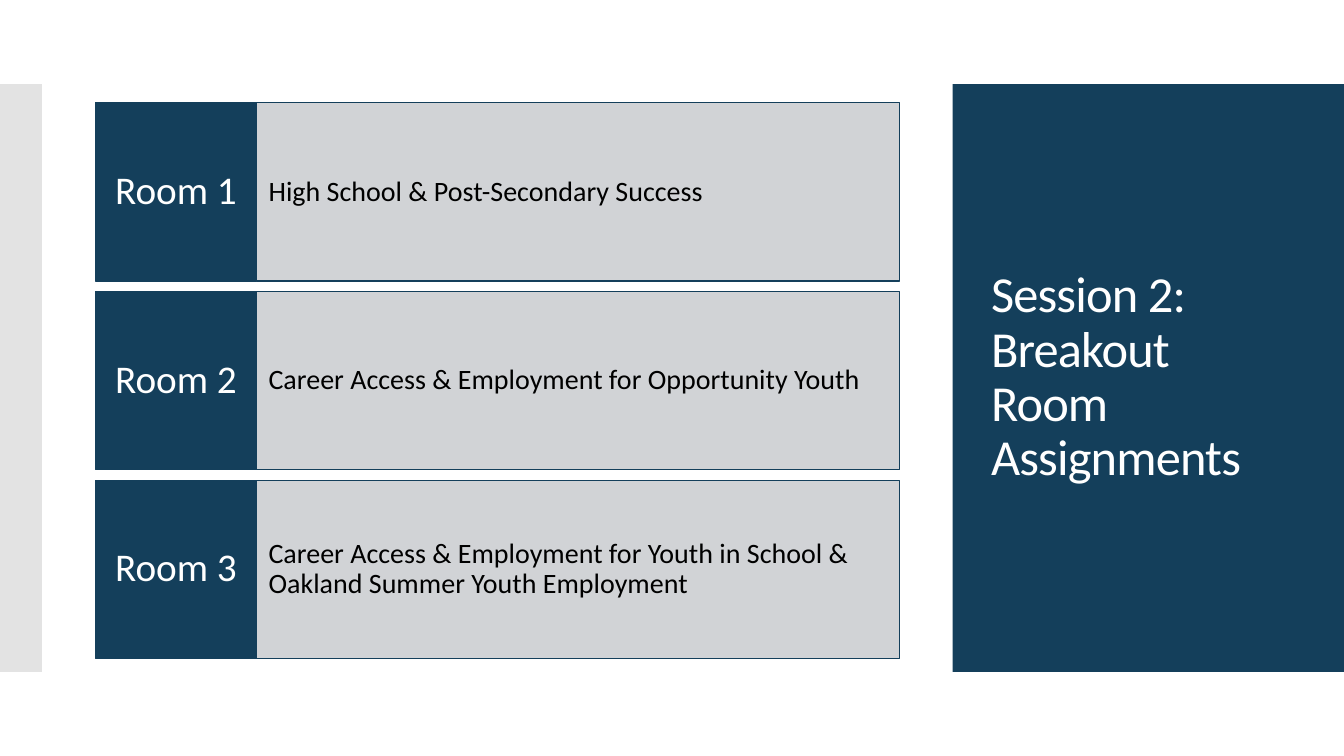
from lxml import etree
from pptx import Presentation
from pptx.dml.color import RGBColor
from pptx.enum import shapes, text
from pptx.oxml import ns
from pptx.util import Pt

NAVY = RGBColor(0x14, 0x3F, 0x5B)
PALE = RGBColor(0xD1, 0xD3, 0xD6)
GREY = RGBColor(0xC8, 0xC8, 0xC8)
WHITE = RGBColor(0xFF, 0xFF, 0xFF)
BLACK = RGBColor(0, 0, 0)
FONT = "Calibri"

SLIDE_WIDTH, SLIDE_HEIGHT = 960, 540
BAND_TOP, BAND_HEIGHT = 60, 420
ROOMS = [
    ("Room 1", "High School & Post-Secondary Success"),
    ("Room 2", "Career Access & Employment for Opportunity Youth"),
    ("Room 3", "Career Access & Employment for Youth in School & "
               "Oakland Summer Youth Employment"),
]


def add_block(slide, box, fill, outline=None):
    block = slide.shapes.add_shape(
        shapes.MSO_SHAPE.RECTANGLE, *(Pt(length) for length in box))
    block.shadow.inherit = False
    block.fill.solid()
    block.fill.fore_color.rgb = fill
    if outline is None:
        block.line.fill.background()
    else:
        block.line.color.rgb = outline
        block.line.width = Pt(0.85)
    return block


def write(shape, wording, size, color, align, inset):
    """Set one wrapped, vertically centred paragraph with equal side insets."""
    frame = shape.text_frame
    frame.text = wording
    frame.word_wrap = True
    frame.auto_size = text.MSO_AUTO_SIZE.NONE
    frame.vertical_anchor = text.MSO_ANCHOR.MIDDLE
    frame.margin_left = frame.margin_right = Pt(inset)
    paragraph = frame.paragraphs[0]
    paragraph.alignment = align
    paragraph.line_spacing = 0.9
    run = paragraph.runs[0]
    run.font.name = FONT
    run.font.size = Pt(size)
    run.font.color.rgb = color
    return run


def add_edge_strip(slide, box):
    strip = add_block(slide, box, GREY)
    color = strip.fill._xPr.find(".//" + ns.qn("a:srgbClr"))
    etree.SubElement(color, ns.qn("a:alpha"), val="50000")


def add_title_panel(slide, box, wording):
    left, top, width, height = box
    panel = add_block(slide, box, NAVY)
    title = slide.shapes.title
    title._element.addprevious(panel._element)
    title.left, title.top = Pt(left + 20.16), Pt(top + 28.8)
    title.width, title.height = Pt(width - 47.5), Pt(height - 57.6)
    run = write(title, wording, 36, WHITE, text.PP_ALIGN.LEFT, 7.2)
    run._r.get_or_add_rPr().set("spc", "-60")


def add_room_list(slide, box, rooms, label_width=115, gap=7.5):
    left, top, width, height = box
    row_height = (height - gap * (len(rooms) - 1)) / len(rooms)
    for index, (room, topic) in enumerate(rooms):
        row_top = top + index * (row_height + gap)
        topic_box = (left + label_width, row_top, width - label_width, row_height)
        topic_cell = add_block(slide, topic_box, PALE, NAVY)
        write(topic_cell, topic, 20, BLACK, text.PP_ALIGN.LEFT, 8.64)
        room_cell = add_block(
            slide, (left, row_top, label_width, row_height), NAVY, NAVY)
        write(room_cell, room, 28, WHITE, text.PP_ALIGN.CENTER, 5.76)


def main():
    deck = Presentation()
    deck.slide_width, deck.slide_height = Pt(SLIDE_WIDTH), Pt(SLIDE_HEIGHT)
    slide = deck.slides.add_slide(deck.slide_layouts[5])
    slide.background.fill.solid()
    slide.background.fill.fore_color.rgb = WHITE
    panel_left = 680.5
    add_title_panel(
        slide, (panel_left, BAND_TOP, SLIDE_WIDTH - panel_left, BAND_HEIGHT),
        "Session 2: Breakout Room Assignments")
    add_edge_strip(slide, (0, BAND_TOP, 30, BAND_HEIGHT))
    add_room_list(slide, (68.2, 73.5, 574.2, 396.7), ROOMS)
    deck.save("out.pptx")


if __name__ == "__main__":
    main()
